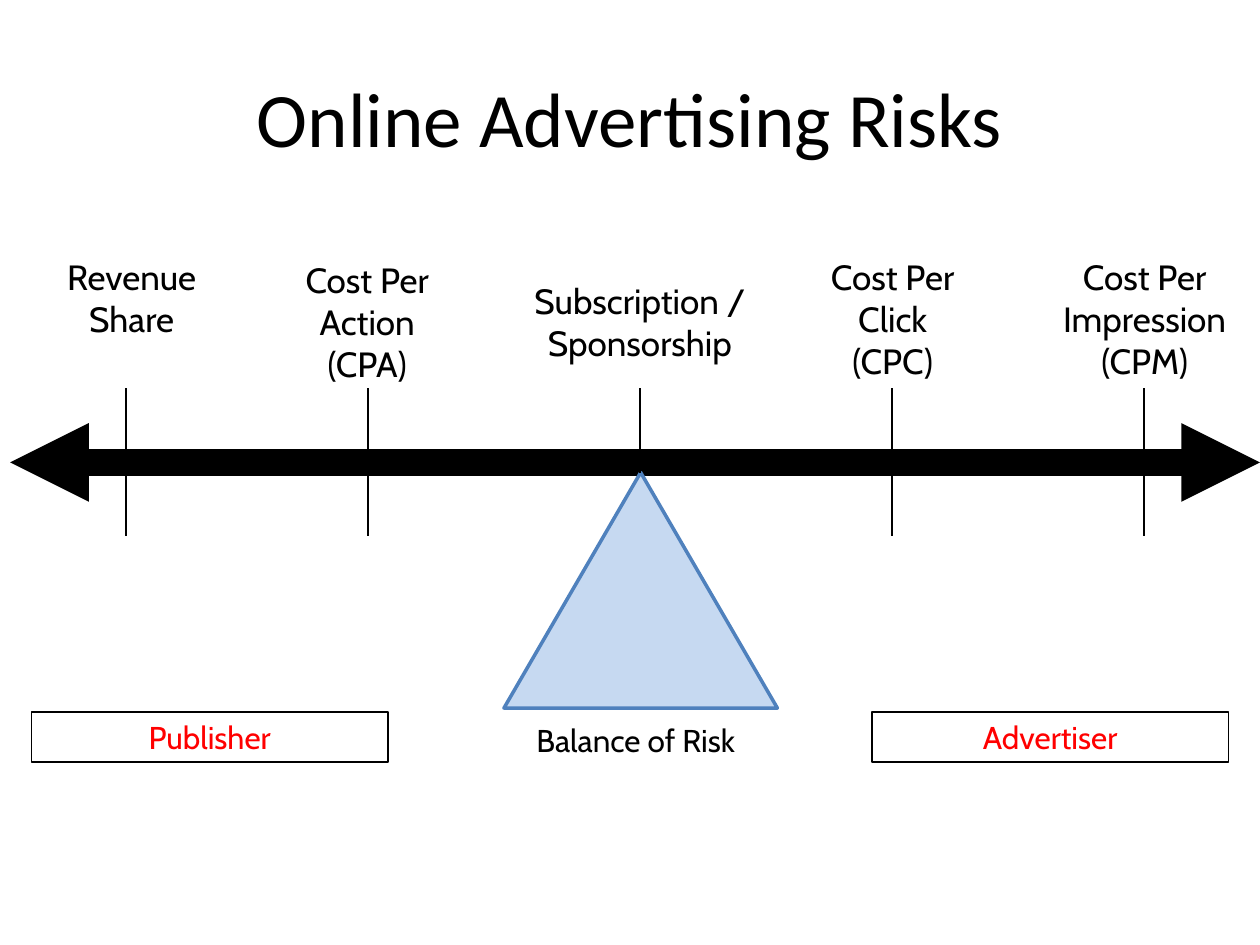
from lxml.etree import SubElement
from pptx import Presentation
from pptx.dml.color import RGBColor
from pptx.enum.shapes import MSO_CONNECTOR, MSO_SHAPE
from pptx.enum.text import MSO_ANCHOR, PP_ALIGN
from pptx.oxml.ns import qn
from pptx.util import Inches, Pt

BLACK, RED, PALE_BLUE, BLUE = "000000", "FF0000", "C6D9F1", "4F81BD"
BEAM_Y, TICK_TOP, TICK_BOTTOM = 3.67, 3.08, 4.25
PIVOT_Y = 3.75

# label, label box (left, top, width, height), tick x, tick bottom
MODELS = [
    ("Revenue Share", (0.17, 1.98, 1.75, 0.77), 1, TICK_BOTTOM),
    ("Cost Per Action (CPA)", (2.25, 2, 1.33, 1.11), 2.92, TICK_BOTTOM),
    ("Subscription / Sponsorship", (4.08, 2.17, 2, 0.77), 5.08, PIVOT_Y),
    ("Cost Per Click (CPC)", (6.42, 1.98, 1.33, 1.1), 7.08, TICK_BOTTOM),
    ("Cost Per Impression (CPM)", (8.17, 1.98, 1.83, 1.1), 9.08, TICK_BOTTOM),
]


def rgb(color):
    return RGBColor.from_string(color)


def inches(box):
    return [Inches(v) for v in box]


def write(shape, text, size, color=BLACK, font="Cabin", anchor=MSO_ANCHOR.TOP):
    tf = shape.text_frame
    tf.text = text
    for name, value in {"word_wrap": True, "vertical_anchor": anchor}.items():
        setattr(tf, name, value)
    p = tf.paragraphs[0]
    p.alignment = PP_ALIGN.CENTER
    f = p.runs[0].font
    for name, value in {"name": font, "size": Pt(size)}.items():
        setattr(f, name, value)
    f.color.rgb = rgb(color)


def add_label(s, box, text, size):
    write(s.shapes.add_textbox(*inches(box)), text, size)


def add_line(s, start, end, width, arrows=False):
    line = s.shapes.add_connector(MSO_CONNECTOR.STRAIGHT, *inches(start + end))
    line.line.color.rgb = rgb(BLACK)
    line.line.width = Pt(width)
    if arrows:
        for tag in ("a:headEnd", "a:tailEnd"):
            SubElement(line.line._get_or_add_ln(), qn(tag), type="triangle")
    SubElement(line._element.spPr, qn("a:effectLst"))


def add_outlined(s, kind, box, color, width, fill=None):
    shape = s.shapes.add_shape(kind, *inches(box))
    shape.shadow.inherit = False
    if fill:
        shape.fill.solid()
        shape.fill.fore_color.rgb = rgb(fill)
    else:
        shape.fill.background()
    shape.line.color.rgb = rgb(color)
    shape.line.width = Pt(width)
    return shape


def add_title(s, box, text):
    title = s.shapes.title
    title.left, title.top, title.width, title.height = inches(box)
    write(title, text, 44, font="Calibri", anchor=MSO_ANCHOR.MIDDLE)


def add_fulcrum(s, box):
    """Triangle under the beam, with its caption centred below."""
    left, top, width, height = box
    add_outlined(s, MSO_SHAPE.ISOSCELES_TRIANGLE, box, BLUE, 2, PALE_BLUE)
    caption_width = 3.25
    caption_left = left + (width - caption_width) / 2 - 0.04
    add_label(s, (caption_left, top + height + 0.05, caption_width, 0.4),
              "Balance of Risk", 18)


def add_party(s, box, text):
    write(add_outlined(s, MSO_SHAPE.RECTANGLE, box, BLACK, 1), text, 18, RED)


def add_scale(s, left, right):
    """Beam with a tick and a label for each pricing model."""
    add_line(s, (left, BEAM_Y), (right, BEAM_Y), 15, arrows=True)
    add_fulcrum(s, (4, PIVOT_Y, 2.17, 1.87))
    for text, box, x, bottom in MODELS:
        add_line(s, (x, bottom), (x, TICK_TOP), 0.75)
        add_label(s, box, text, 20)


def main():
    prs = Presentation()
    prs.slide_width, prs.slide_height = Inches(10), Inches(7.5)
    s = prs.slides.add_slide(prs.slide_layouts[5])
    add_title(s, (0.5, 0.3, 9, 1.25), "Online Advertising Risks")
    add_scale(s, 0.08, 10)
    for left, party in ((0.25, "Publisher"), (6.92, "Advertiser")):
        add_party(s, (left, 5.65, 2.83, 0.4), party)
    prs.save("out.pptx")


if __name__ == "__main__":
    main()
